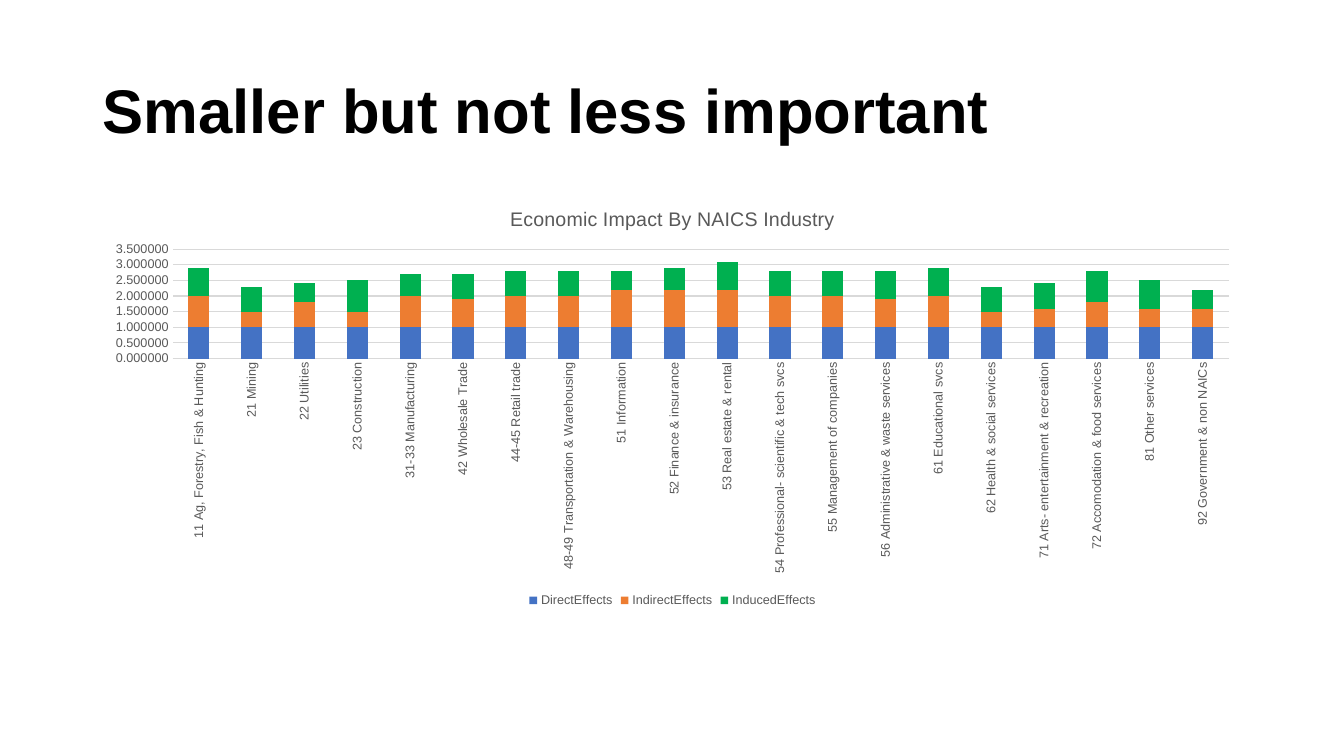
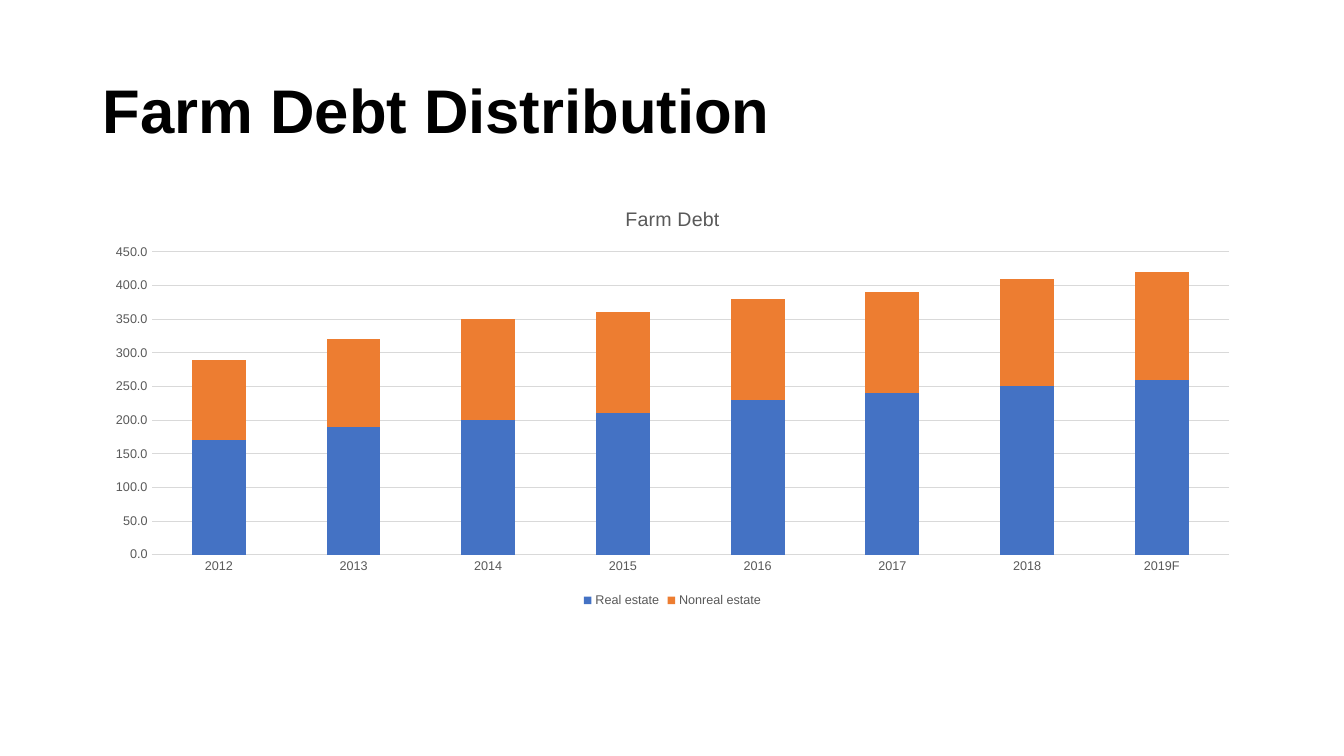
from pptx import Presentation
from pptx.chart.data import CategoryChartData
from pptx.dml.color import RGBColor
from pptx.enum.chart import XL_CHART_TYPE, XL_LEGEND_POSITION, XL_TICK_MARK
from pptx.enum.text import MSO_ANCHOR
from pptx.oxml.ns import qn
from pptx.util import Inches, Pt

STACKED = XL_CHART_TYPE.COLUMN_STACKED
BOTTOM = XL_LEGEND_POSITION.BOTTOM
NO_TICK = XL_TICK_MARK.NONE
MIDDLE = MSO_ANCHOR.MIDDLE

FONT = "Arial"
COLORS = {
    "title": "000000",
    "label": "595959",
    "grid": "D9D9D9",
    "blue": "4472C4",
    "orange": "ED7D31",
    "green": "00B050",
}
SERIES_COLORS = ("blue", "orange", "green")
LEFT, WIDTH = Inches(0.92), Inches(11.5)

INDUSTRIES = [
    # name, indirect effect, induced effect
    ("11 Ag, Forestry, Fish & Hunting", 1, 0.9),
    ("21 Mining", 0.5, 0.8),
    ("22 Utilities", 0.8, 0.6),
    ("23 Construction", 0.5, 1),
    ("31-33 Manufacturing", 1, 0.7),
    ("42 Wholesale Trade", 0.9, 0.8),
    ("44-45 Retail trade", 1, 0.8),
    ("48-49 Transportation & Warehousing", 1, 0.8),
    ("51 Information", 1.2, 0.6),
    ("52 Finance & insurance", 1.2, 0.7),
    ("53 Real estate & rental", 1.2, 0.9),
    ("54 Professional- scientific & tech svcs", 1, 0.8),
    ("55 Management of companies", 1, 0.8),
    ("56 Administrative & waste services", 0.9, 0.9),
    ("61 Educational svcs", 1, 0.9),
    ("62 Health & social services", 0.5, 0.8),
    ("71 Arts- entertainment & recreation", 0.6, 0.8),
    ("72 Accomodation & food services", 0.8, 1),
    ("81 Other services", 0.6, 0.9),
    ("92 Government & non NAICs", 0.6, 0.6),
]
DEBT_YEARS = ["2012", "2013", "2014", "2015", "2016", "2017", "2018", "2019F"]
DEBT = {
    "Real estate": [170, 190, 200, 210, 230, 240, 250, 260],
    "Nonreal estate": [120, 130, 150, 150, 150, 150, 160, 160],
}


def color(name):
    return RGBColor.from_string(COLORS[name])


def style_font(font, size, color_name, bold=False):
    font.name = FONT
    font.size = Pt(size)
    font.bold = bold
    font.color.rgb = color(color_name)


def write(text_frame, text, size, color_name, bold=False, line_spacing=None):
    """Put one formatted paragraph in a text frame."""
    paragraph = text_frame.paragraphs[0]
    paragraph.line_spacing = line_spacing
    run = paragraph.add_run()
    run.text = text
    style_font(run.font, size, color_name, bold)


class Deck:
    def __init__(self):
        self.presentation = Presentation()
        self.presentation.slide_width = Inches(13.33)
        self.presentation.slide_height = Inches(7.5)
        self.slide = None

    def add_slide(self, title):
        layout = self.presentation.slide_layouts[6]
        self.slide = self.presentation.slides.add_slide(layout)
        shape = self.slide.shapes.add_textbox(LEFT, Inches(0.4), WIDTH, Inches(1.45))
        frame = shape.text_frame
        frame.word_wrap = True
        frame.vertical_anchor = MIDDLE
        write(frame, title, 44, "title", bold=True, line_spacing=0.9)

    def add_stacked_chart(self, title, categories, series, number_format,
                          maximum, step, vertical_labels=False):
        data = CategoryChartData()
        data.categories = categories
        for name, values in series.items():
            data.add_series(name, values)
        chart = self.slide.shapes.add_chart(
            STACKED, LEFT, Inches(1.87), WIDTH, Inches(4.2), data).chart
        style_font(chart.font, 10, "title")
        chart.has_title = True
        write(chart.chart_title.text_frame, title, 14, "label")
        chart.chart_title.include_in_layout = False

        chart.has_legend = True
        chart.legend.position = BOTTOM
        chart.legend.include_in_layout = False
        style_font(chart.legend.font, 9, "label")

        plot = chart.plots[0]
        plot.gap_width = 150
        plot.overlap = 100
        plot.vary_by_categories = False
        for chart_series, name in zip(plot.series, SERIES_COLORS):
            chart_series.format.fill.solid()
            chart_series.format.fill.fore_color.rgb = color(name)

        self.style_axes(chart, number_format, maximum, step, vertical_labels)

    def style_axes(self, chart, number_format, maximum, step, vertical_labels):
        category_axis, value_axis = chart.category_axis, chart.value_axis
        for axis in (category_axis, value_axis):
            axis.major_tick_mark = NO_TICK
            axis.minor_tick_mark = NO_TICK
            style_font(axis.tick_labels.font, 9, "label")

        value_axis.minimum_scale = 0
        value_axis.maximum_scale = maximum
        value_axis.major_unit = step
        value_axis.tick_labels.number_format = number_format
        value_axis.tick_labels.number_format_is_linked = False
        value_axis.format.line.fill.background()
        for line in (category_axis.format.line, value_axis.major_gridlines.format.line):
            line.color.rgb = color("grid")
            line.width = Pt(0.75)

        if vertical_labels:
            body = category_axis._element.find(qn("c:txPr")).find(qn("a:bodyPr"))
            body.set("rot", "-5400000")
            body.set("vert", "horz")


def main():
    deck = Deck()

    names, indirect, induced = zip(*INDUSTRIES)
    effects = {
        "DirectEffects": [1] * len(names),
        "IndirectEffects": indirect,
        "InducedEffects": induced,
    }
    deck.add_slide("Smaller but not less important")
    deck.add_stacked_chart("Economic Impact By NAICS Industry", names, effects,
                           "#,##0.000000", 3.5, 0.5, vertical_labels=True)

    deck.add_slide("Farm Debt Distribution")
    deck.add_stacked_chart("Farm Debt", DEBT_YEARS, DEBT, "#,##0.0", 450, 50)

    deck.presentation.save("out.pptx")


if __name__ == "__main__":
    main()
